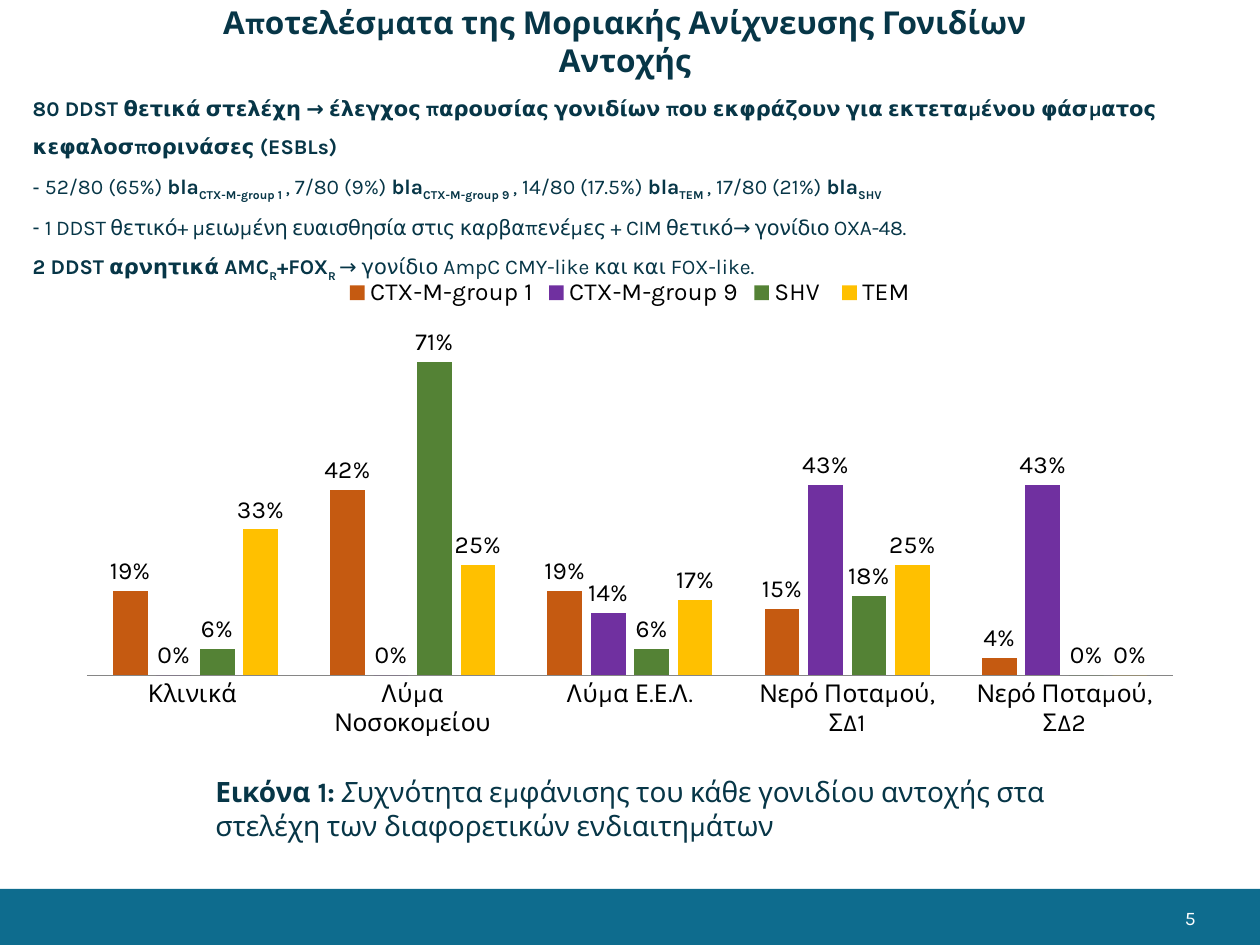
from pptx import Presentation
from pptx.chart.data import CategoryChartData
from pptx.dml.color import RGBColor
from pptx.enum.chart import XL_CHART_TYPE as ChartType, XL_LABEL_POSITION as LabelPosition
from pptx.enum.chart import XL_LEGEND_POSITION as LegendPosition, XL_TICK_MARK as TickMark
from pptx.enum.shapes import MSO_SHAPE as Preset
from pptx.enum.text import MSO_ANCHOR as Anchor, MSO_AUTO_SIZE as AutoSize, PP_ALIGN as Align
from pptx.oxml.ns import qn
from pptx.util import Pt
from lxml.etree import SubElement

THEME = dict(
    font="Karla", ink="073647", band="0E6C8E", white="FFFFFF", black="000000", axis="868686",
    title=18, caption=16, chart=14, body=12, number=11,
)
WIDTH, HEIGHT = 720, 540
BAND_TOP = 508

TITLE = [[("Αποτελέσματα της Μοριακής Ανίχνευσης Γονιδίων Αντοχής", "b")]]
FINDINGS = [
    [("80 DDST θετικά στελέχη → έλεγχος παρουσίας γονιδίων που εκφράζουν για "
      "εκτεταμένου φάσματος κεφαλοσπορινάσες (ESBLs)", "b")],
    [("52/80 (65%) ", "-"), ("bla", "b"), ("CTX-M-group 1 ", "bs"),
     (", 7/80 (9%) ", ""), ("bla", "b"), ("CTX-M-group 9 ", "bs"),
     (", 14/80 (17.5%) ", ""), ("bla", "b"), ("TEM ", "bs"),
     (", 17/80 (21%) ", ""), ("bla", "b"), ("SHV", "bs")],
    [("1 DDST θετικό+ μειωμένη ευαισθησία στις καρβαπενέμες + CIM θετικό→ γονίδιο OXA-48.", "-t")],
    [("2 DDST αρνητικά AMC", "b"), ("R", "bs"), ("+FOX", "b"), ("R ", "bs"),
     ("→ γονίδιο AmpC CMY-like και και FOX-like.", "")],
]
CAPTION = [[
    ("Εικόνα 1: ", "b"), ("Σ", "i"),
    ("υχνότητα εμφάνισης του κάθε γονιδίου αντοχής στα στελέχη των διαφορετικών ενδιαιτημάτων", ""),
]]
PAGE_NUMBER = [[("5", "")]]

HABITATS = ["Κλινικά ", "Λύμα Νοσοκομείου", "Λύμα Ε.Ε.Λ.", "Νερό Ποταμού, ΣΔ1", "Νερό Ποταμού, ΣΔ2"]
GENES = [
    ("CTX-M-group 1", "C55A11", (0.19, 0.42, 0.19, 0.15, 0.04)),
    ("CTX-M-group 9", "7030A0", (0, 0, 0.14, 0.43, 0.43)),
    ("SHV ", "548235", (0.06, 0.71, 0.06, 0.18, 0)),
    ("TEM", "FFC000", (0.33, 0.25, 0.17, 0.25, 0)),
]


def color(name):
    return RGBColor.from_string(THEME.get(name, name))


def box(left, top, width, height):
    return Pt(left), Pt(top), Pt(width), Pt(height)


def place(holder, *bounds):
    holder.left, holder.top, holder.width, holder.height = box(*bounds)
    return holder


def style(font, size, ink):
    font.name, font.size = THEME["font"], Pt(THEME[size])
    font.color.rgb = color(ink)


def set_bullet(paragraph, dashed):
    properties = paragraph._p.get_or_add_pPr()
    indent = Pt(7) if dashed else 0
    properties.set("marL", str(indent))
    properties.set("indent", str(-indent))
    if dashed:
        SubElement(properties, qn("a:buChar")).set("char", "-")
    else:
        SubElement(properties, qn("a:buNone"))


def write(holder, paragraphs, size, ink="ink", align=Align.LEFT, anchor=Anchor.TOP,
          margins=(7.2, 3.6), spacing=1):
    frame = holder.text_frame
    frame.word_wrap, frame.auto_size = True, AutoSize.NONE
    frame.vertical_anchor = anchor
    frame.margin_left = frame.margin_right = Pt(margins[0])
    frame.margin_top = frame.margin_bottom = Pt(margins[1])
    for index, pieces in enumerate(paragraphs):
        paragraph = frame.add_paragraph() if index else frame.paragraphs[0]
        set_bullet(paragraph, "-" in pieces[0][1])
        paragraph.alignment, paragraph.line_spacing = align, spacing
        paragraph.space_before = paragraph.space_after = Pt(0)
        for text, marks in pieces:
            run = paragraph.add_run()
            run.text = text
            style(run.font, size, ink)
            run.font.bold, run.font.italic = "b" in marks, "i" in marks
            if "s" in marks:
                run._r.get_or_add_rPr().set("baseline", "-25000")
            if "t" in marks:
                run._r.get_or_add_rPr().set("spc", "-20")


def add_gene_chart(slide):
    data = CategoryChartData(number_format="0%")
    data.categories = HABITATS
    for gene, _, shares in GENES:
        data.add_series(gene, shares)
    chart = slide.shapes.add_chart(
        ChartType.COLUMN_CLUSTERED, *box(36.7, 151, 646.6, 276.3), data).chart
    style(chart.font, "chart", "black")
    chart.has_title = False
    chart.has_legend = True
    chart.legend.position = LegendPosition.TOP
    chart.legend.include_in_layout = False

    shares_axis = chart.value_axis
    shares_axis.visible = shares_axis.has_major_gridlines = False
    shares_axis.minimum_scale, shares_axis.maximum_scale = 0, 0.8
    habitat_axis = chart.category_axis
    habitat_axis.major_tick_mark = habitat_axis.minor_tick_mark = TickMark.NONE
    habitat_axis.format.line.color.rgb = color("axis")

    plot = chart.plots[0]
    plot.gap_width, plot.overlap, plot.vary_by_categories = 150, -25, False
    for series, (_, fill, _) in zip(plot.series, GENES):
        series.format.fill.solid()
        series.format.fill.fore_color.rgb = color(fill)
        labels = series.data_labels
        labels.show_value, labels.position = True, LabelPosition.OUTSIDE_END
        labels.number_format, labels.number_format_is_linked = "0%", False
        style(labels.font, "chart", "black")


def main():
    deck = Presentation()
    deck.slide_width, deck.slide_height = Pt(WIDTH), Pt(HEIGHT)
    slide = deck.slides.add_slide(deck.slide_layouts[1])
    title, findings = slide.placeholders

    band = slide.shapes.add_shape(Preset.RECTANGLE, *box(0, BAND_TOP, WIDTH, HEIGHT - BAND_TOP))
    band.shadow.inherit = False
    band.fill.solid()
    band.fill.fore_color.rgb = color("band")
    band.line.fill.background()
    number = slide.shapes.add_textbox(*box(526.3, BAND_TOP, 162, 33.1))
    write(number, PAGE_NUMBER, "number", ink="white", align=Align.RIGHT,
          anchor=Anchor.MIDDLE, margins=(5, 3))

    write(place(title, 93.6, 3.6, 527, 39.6), TITLE, "title",
          align=Align.CENTER, anchor=Anchor.MIDDLE, margins=(0, 0))
    caption = slide.shapes.add_textbox(*box(116, 439.2, 521.3, 46))
    write(caption, CAPTION, "caption")
    write(place(findings, 11.5, 44, 683.3, 94.3), FINDINGS, "body", spacing=1.5)
    add_gene_chart(slide)
    deck.save("out.pptx")


if __name__ == "__main__":
    main()
